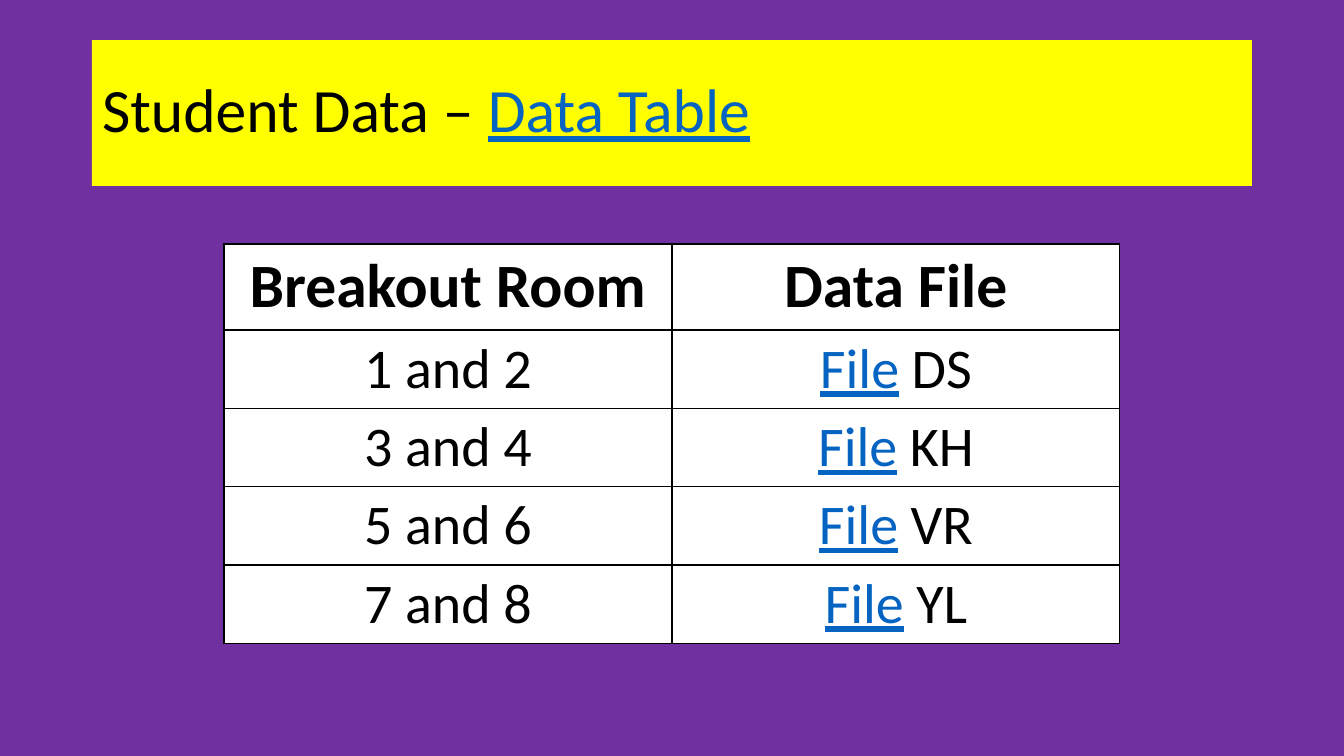
from lxml import etree
from pptx import Presentation
from pptx.dml.color import RGBColor
from pptx.enum.text import MSO_ANCHOR, MSO_AUTO_SIZE, PP_ALIGN
from pptx.oxml.ns import qn
from pptx.util import Emu, Pt

LEFT, CENTER = PP_ALIGN.LEFT, PP_ALIGN.CENTER
MIDDLE = MSO_ANCHOR.MIDDLE
NO_FIT = MSO_AUTO_SIZE.NONE
TITLE_ONLY = 5
PX_PER_INCH = 100.8
FONT = "Calibri"
PURPLE, YELLOW, WHITE, BLACK, LINK_BLUE = "7030A0", "FFFF00", "FFFFFF", "000000", "0563C1"
HEADER_SIZE, BODY_SIZE = 44, 40
HEADER_HEIGHT, BODY_HEIGHT = 86, 78
COLUMN_WIDTH = 448
HEADERS = ["Breakout Room", "Data File"]
ROOMS = [("1 and 2", "DS"), ("3 and 4", "KH"), ("5 and 6", "VR"), ("7 and 8", "YL")]


def px(length):
    """Turn pixels into EMU."""
    return Emu(round(length * 914400 / PX_PER_INCH))


def paint(fill, color):
    """Give a fill one solid colour."""
    fill.solid()
    fill.fore_color.rgb = RGBColor.from_string(color)


def add_span(para, text, size, bold=False, link=False):
    """Add one run, in link style if asked."""
    span = para.add_run()
    span.text = text
    font = span.font
    font.name, font.size, font.bold, font.underline = FONT, Pt(size), bold, link
    font.color.rgb = RGBColor.from_string(LINK_BLUE if link else BLACK)


def add_borders(cell):
    """Draw a thin black line on all four sides of a cell."""
    properties = cell._tc.get_or_add_tcPr()
    for side in ("lnL", "lnR", "lnT", "lnB"):
        line = etree.SubElement(properties, qn(f"a:{side}"), w=str(Pt(1)))
        fill = etree.SubElement(line, qn("a:solidFill"))
        etree.SubElement(fill, qn("a:srgbClr"), val=BLACK)


def format_cell(cell):
    """Style a cell and return its centred paragraph."""
    add_borders(cell)
    paint(cell.fill, WHITE)
    para = cell.text_frame.paragraphs[0]
    para.alignment = CENTER
    return para


def fill_title(page):
    """Place the yellow title band and write its text."""
    box = page.shapes.title
    box.left, box.top, box.width, box.height = px(92), px(40), px(1160), px(146)
    paint(box.fill, YELLOW)
    frame = box.text_frame
    frame.auto_size, frame.word_wrap, frame.vertical_anchor = NO_FIT, True, MIDDLE
    para = frame.paragraphs[0]
    para.alignment, para.line_spacing = LEFT, 0.9
    add_span(para, "Student Data – ", HEADER_SIZE)
    add_span(para, "Data Table", HEADER_SIZE, link=True)


def add_room_table(page):
    """Add the table of breakout rooms and their data files."""
    height = HEADER_HEIGHT + BODY_HEIGHT * len(ROOMS)
    table = page.shapes.add_table(len(ROOMS) + 1, len(HEADERS), px(224), px(244),
                                  px(COLUMN_WIDTH * len(HEADERS)), px(height)).table
    for column, header in enumerate(HEADERS):
        table.columns[column].width = px(COLUMN_WIDTH)
        add_span(format_cell(table.cell(0, column)), header, HEADER_SIZE, bold=True)
    table.rows[0].height = px(HEADER_HEIGHT)
    for row, (rooms, initials) in enumerate(ROOMS, start=1):
        table.rows[row].height = px(BODY_HEIGHT)
        add_span(format_cell(table.cell(row, 0)), rooms, BODY_SIZE)
        para = format_cell(table.cell(row, 1))
        add_span(para, "File", BODY_SIZE, link=True)
        add_span(para, f" {initials}", BODY_SIZE)


def main():
    """Build the slide and save it."""
    deck = Presentation()
    deck.slide_width, deck.slide_height = px(1344), px(756)
    page = deck.slides.add_slide(deck.slide_layouts[TITLE_ONLY])
    paint(page.background.fill, PURPLE)
    fill_title(page)
    add_room_table(page)
    deck.save("out.pptx")


if __name__ == "__main__":
    main()
